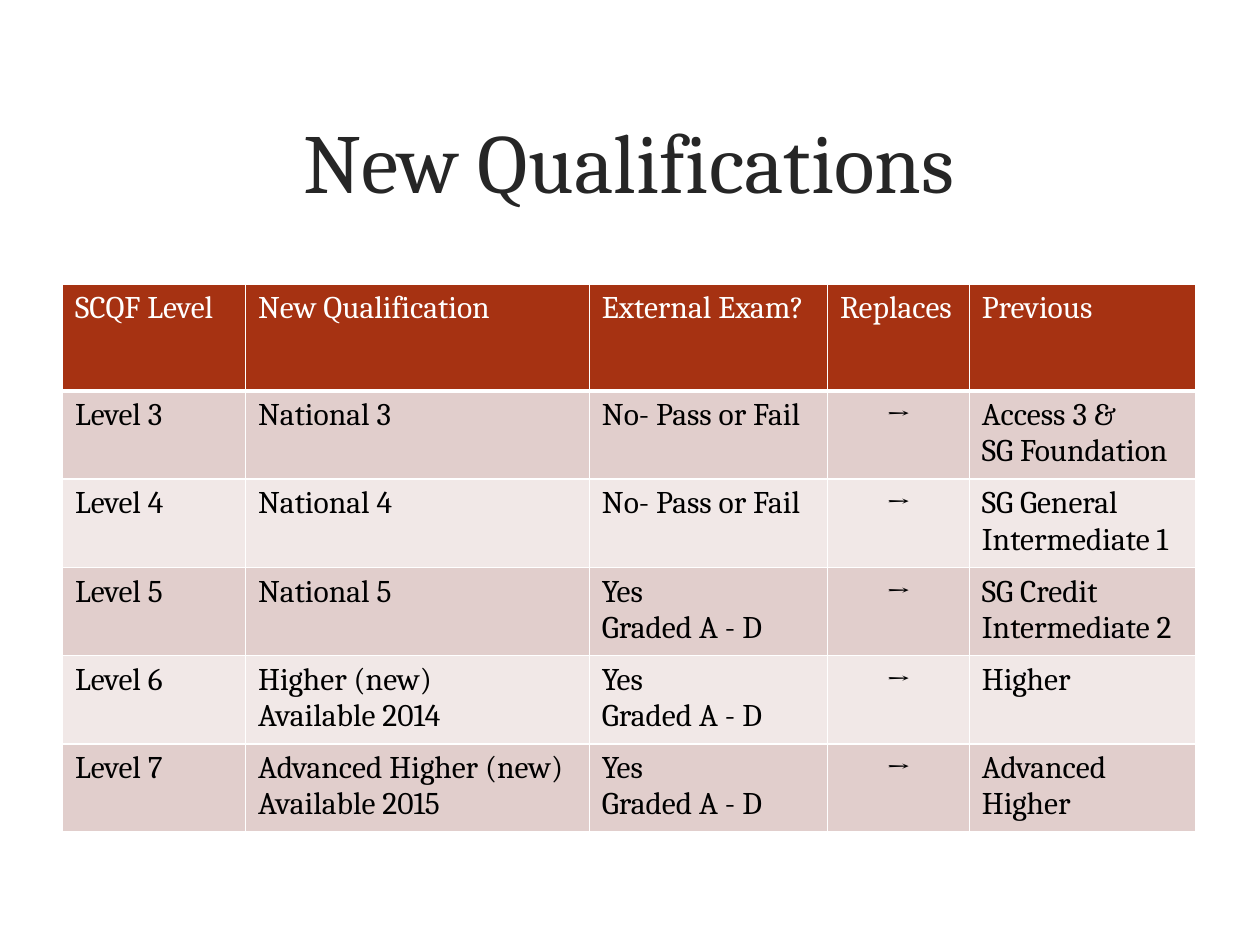
from dataclasses import dataclass

from lxml.etree import SubElement
from pptx import Presentation
from pptx.dml.color import RGBColor as RGB
from pptx.enum.text import MSO_ANCHOR as Anchor, PP_ALIGN as Align
from pptx.oxml.ns import qn
from pptx.util import Cm, Pt

TITLE = "New Qualifications"
ARROW = "→"
HEADER = ("SCQF Level", "New Qualification", "External Exam?", "Replaces", "Previous")
PASS_FAIL = "No- Pass or Fail"
GRADED = "Yes\nGraded A - D"
LEVELS = [
    ("Level 3", "National 3", PASS_FAIL, ARROW, "Access 3 &\nSG Foundation"),
    ("Level 4", "National 4", PASS_FAIL, ARROW, "SG General\nIntermediate 1"),
    ("Level 5", "National 5", GRADED, ARROW, "SG Credit\nIntermediate 2"),
    ("Level 6", "Higher (new)\nAvailable 2014", GRADED, ARROW, "Higher"),
    ("Level 7", "Advanced Higher (new)\nAvailable 2015", GRADED, ARROW, "Advanced Higher"),
]
COL_WIDTHS = (3.69, 6.93, 4.8, 2.86, 4.57)
HEADER_HEIGHT, ROW_HEIGHT = 2.15, 1.05


@dataclass(frozen=True)
class Theme:
    font: str = "Cambria"
    title_size: int = 48
    table_size: int = 18
    title: str = "262626"
    header_text: str = "FFFFFF"
    body_text: str = "000000"
    header_fill: str = "A63212"
    bands: tuple = ("E1CECC", "F1E8E7")
    rule: str = "FFFFFF"


THEME = Theme()


def style(p, size, color, bold=False):
    for r in p.runs:
        r.font.name = THEME.font
        r.font.size = Pt(size)
        r.font.bold = bold
        r.font.color.rgb = RGB.from_string(color)


def set_borders(cell, bottom):
    """Rule all four sides at 1 pt, except the bottom at the given width."""
    tc_pr = cell._tc.get_or_add_tcPr()
    sides = (("a:lnL", 1), ("a:lnR", 1), ("a:lnT", 1), ("a:lnB", bottom))
    for i, (tag, width) in enumerate(sides):
        ln = SubElement(tc_pr, qn(tag), w=str(Pt(width)))
        fill = SubElement(ln, qn("a:solidFill"))
        SubElement(fill, qn("a:srgbClr"), val=THEME.rule)
        tc_pr.insert(i, ln)  # borders must precede the cell fill


def fill_cell(cell, text, fill, color, bottom):
    cell.text_frame.text = text
    for p in cell.text_frame.paragraphs:
        if text == ARROW:
            p.alignment = Align.CENTER
        style(p, THEME.table_size, color, bold=text == ARROW)
    cell.fill.solid()
    cell.fill.fore_color.rgb = RGB.from_string(fill)
    set_borders(cell, bottom)


def add_title(s):
    tf = s.shapes.add_textbox(Cm(1.52), Cm(1.22), Cm(22.33), Cm(4.01)).text_frame
    tf.word_wrap = True
    tf.vertical_anchor = Anchor.MIDDLE
    tf.text = TITLE
    p = tf.paragraphs[0]
    p.alignment = Align.CENTER
    style(p, THEME.title_size, THEME.title)


def add_levels_table(s):
    rows = [HEADER, *LEVELS]
    height = HEADER_HEIGHT + ROW_HEIGHT * len(LEVELS)
    table = s.shapes.add_table(len(rows), len(HEADER), Cm(1.26), Cm(5.73),
                               Cm(sum(COL_WIDTHS)), Cm(height)).table
    for col, width in zip(table.columns, COL_WIDTHS):
        col.width = Cm(width)
    for i, row in enumerate(rows):
        table.rows[i].height = Cm(ROW_HEIGHT if i else HEADER_HEIGHT)
        if i:
            look = (THEME.bands[(i - 1) % 2], THEME.body_text, 1)
        else:
            look = (THEME.header_fill, THEME.header_text, 3)
        for j, text in enumerate(row):
            fill_cell(table.cell(i, j), text, *look)


def main():
    prs = Presentation()
    prs.slide_width, prs.slide_height = Cm(25.4), Cm(19.05)
    s = prs.slides.add_slide(prs.slide_layouts[6])
    add_title(s)
    add_levels_table(s)
    prs.save("out.pptx")


if __name__ == "__main__":
    main()
